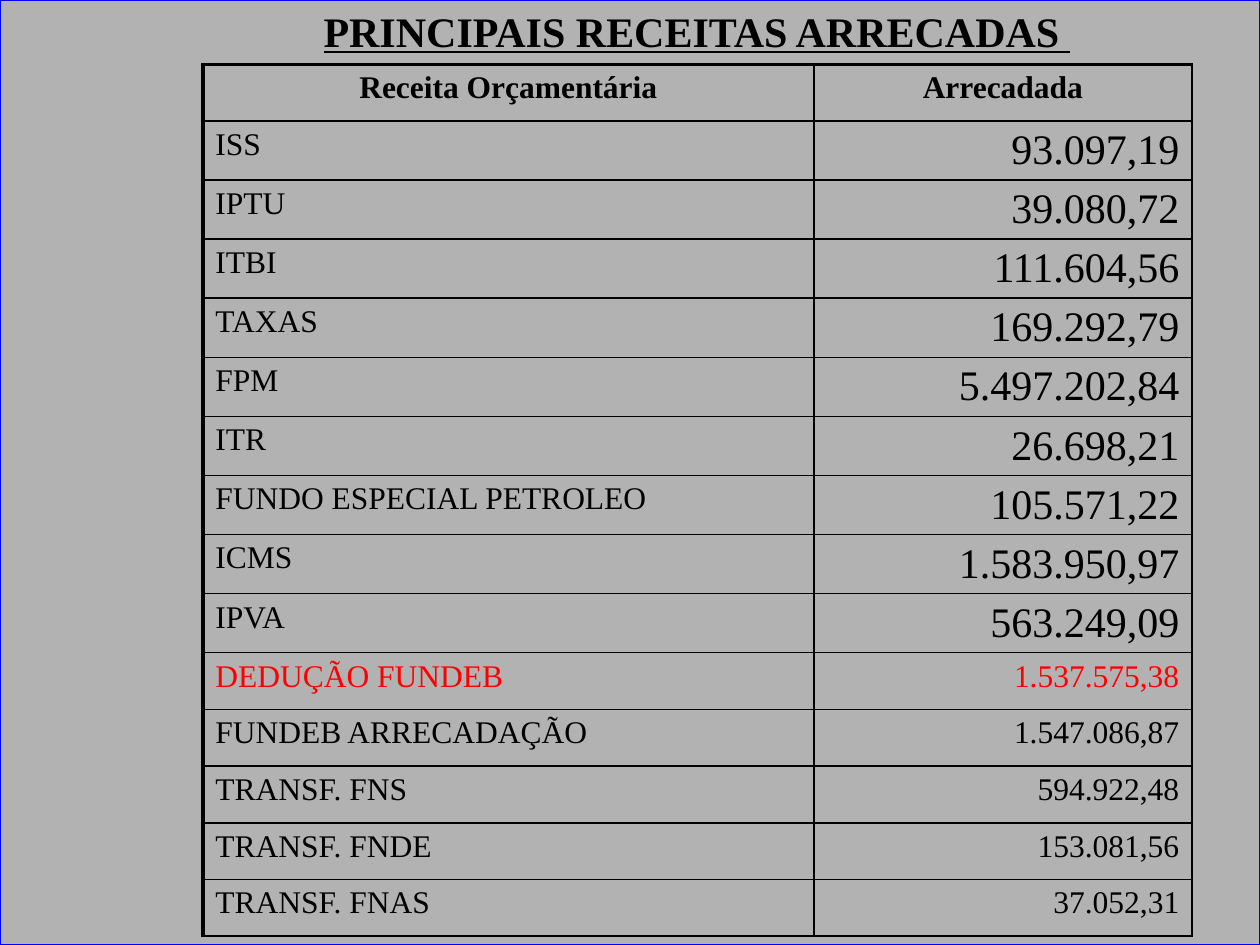
"""Build a slide with a table of the main revenues collected."""
from lxml import etree
from pptx import Presentation, util as u
from pptx.dml.color import RGBColor
from pptx.enum import shapes, text
from pptx.oxml import ns

BLACK, RED, GREY, BLUE = "000000", "FF0000", "B2B2B2", "0000FF"
ROWS = [
    ("Receita Orçamentária", "Arrecadada"),
    ("ISS", "93.097,19"),
    ("IPTU", "39.080,72"),
    ("ITBI", "111.604,56"),
    ("TAXAS", "169.292,79"),
    ("FPM", "5.497.202,84"),
    ("ITR", "26.698,21"),
    ("FUNDO ESPECIAL PETROLEO", "105.571,22"),
    ("ICMS", "1.583.950,97"),
    ("IPVA", "563.249,09"),
    ("DEDUÇÃO FUNDEB", "1.537.575,38"),
    ("FUNDEB ARRECADAÇÃO", "1.547.086,87"),
    ("TRANSF. FNS", "594.922,48"),
    ("TRANSF. FNDE", "153.081,56"),
    ("TRANSF. FNAS", "37.052,31"),
]
DEDUCT = 10
ALIGN = text.PP_ALIGN


def paint(target, color):
    target.rgb = RGBColor.from_string(color)


def style(frame, words, size, align, before, color=BLACK, bold=False):
    frame.text = words
    para = frame.paragraphs[0]
    para.alignment = align
    para.space_before = u.Pt(0)
    gap = para._p.pPr.find(ns.qn("a:spcBef"))
    gap.remove(gap[0])
    etree.SubElement(gap, ns.qn("a:spcPct"), val=str(before * 1000))
    font = para.runs[0].font
    font.name, font.size, font.bold = "Times New Roman", u.Pt(size), bold
    paint(font.color, color)
    return font


deck = Presentation()
deck.slide_width, deck.slide_height = u.Inches(10), u.Inches(7.5)
slide = deck.slides.add_slide(deck.slide_layouts[5])
title = slide.shapes.title

back = slide.shapes.add_shape(
    shapes.MSO_SHAPE.RECTANGLE, 0, 0, deck.slide_width, deck.slide_height)
back.shadow.inherit = False
back.fill.solid()
paint(back.fill.fore_color, GREY)
paint(back.line.color, BLUE)
back.line.width = u.Pt(0.75)

widths, height = (4.85, 3), 0.45
table = slide.shapes.add_table(
    len(ROWS), len(widths), u.Inches(1.61), u.Inches(0.51),
    u.Inches(sum(widths)), u.Inches(height * len(ROWS))).table
table.first_row = table.horz_banding = False
for col, width in zip(table.columns, widths):
    col.width = u.Inches(width)

for r, row in enumerate(ROWS):
    table.rows[r].height = u.Inches(height)
    for c, words in enumerate(row):
        cell = table.cell(r, c)
        align = ALIGN.CENTER if r == 0 else (ALIGN.LEFT, ALIGN.RIGHT)[c]
        size = 24 if c == 1 and 0 < r < DEDUCT else 18
        style(cell.text_frame, words, size, align, 20,
              RED if r == DEDUCT else BLACK, r == 0)
        props = cell._tc.get_or_add_tcPr()
        for side in "LRTB":
            thick = (side == "L" and c == 0) or (side == "T" and r == 0)
            edge = etree.SubElement(props, ns.qn("a:ln" + side),
                                    w=str(u.Pt(2.25 if thick else 1)))
            fill = etree.SubElement(edge, ns.qn("a:solidFill"))
            etree.SubElement(fill, ns.qn("a:srgbClr"), val=BLACK)
        cell.fill.background()

title.left, title.top = u.Inches(1.06), u.Inches(-0.01)
title.width, title.height = u.Inches(8.94), u.Inches(1.1)
frame = title.text_frame
frame.word_wrap = True
frame.auto_size = text.MSO_AUTO_SIZE.NONE
frame.vertical_anchor = text.MSO_ANCHOR.TOP
style(frame, "PRINCIPAIS RECEITAS ARRECADAS ", 24, ALIGN.CENTER, 50,
      bold=True).underline = True
slide.shapes._spTree.append(title._element)

deck.save("out.pptx")
